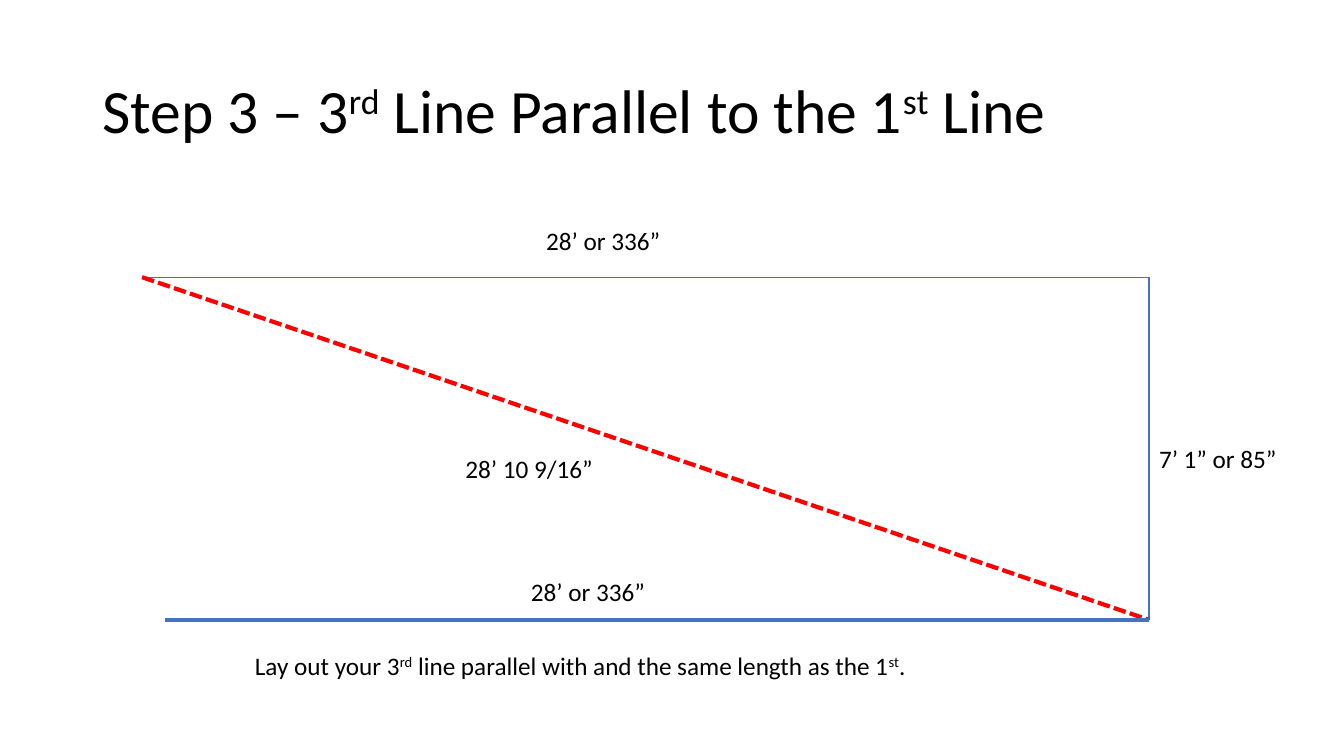
from dataclasses import dataclass

from lxml.etree import SubElement
from pptx import Presentation
from pptx.dml.color import RGBColor
from pptx.enum.dml import MSO_LINE
from pptx.enum.shapes import MSO_CONNECTOR
from pptx.enum.text import MSO_ANCHOR, MSO_AUTO_SIZE, PP_ALIGN
from pptx.oxml.ns import qn
from pptx.slide import Slide
from pptx.text.text import TextFrame
from pptx.util import Pt

FONT = "Calibri"
BLACK = "000000"
BLUE = "4472C4"
RED = "FF0000"
LEFT, TOP, RIGHT, BOTTOM = 101.5, 198, 820.8, 442.8
THIRD_LINE_END = 118.1
LABEL_HEIGHT = 29


@dataclass
class Label:
    left: float
    top: float
    width: float
    wording: tuple[str, ...]


@dataclass
class Line:
    start: tuple[float, float]
    end: tuple[float, float]
    color: str = BLUE
    width: float = 1
    dash: MSO_LINE | None = None


TITLE_WORDING = ("Step 3 – 3", "rd", " Line Parallel to the 1", "st", " Line")

LINES = [
    Line((LEFT, TOP), (RIGHT, TOP)),
    Line((RIGHT, TOP), (RIGHT, BOTTOM)),
    Line((LEFT, TOP), (RIGHT, BOTTOM), RED, 3, MSO_LINE.SQUARE_DOT),
    Line((RIGHT, BOTTOM), (THIRD_LINE_END, BOTTOM), width=3),
]

LABELS = [
    Label(383, 157.7, 97.2, ("28’ or 336”",)),
    Label(325.4, 320.4, 106.6, ("28’ 10 9/16”",)),
    Label(RIGHT, 313.2, 99.4, ("7’ 1” or 85”",)),
    Label(175, 460.8, 491, ("Lay out your 3", "rd", " line parallel with and the same length as the 1", "st", ".")),
    Label(372.2, 408.2, 97.2, ("28’ or 336”",)),
]


def rgb(value: str) -> RGBColor:
    return RGBColor.from_string(value)


def write_text(frame: TextFrame, wording: tuple[str, ...], size: float) -> None:
    paragraph = frame.paragraphs[0]
    paragraph.alignment = PP_ALIGN.LEFT
    paragraph.font.name = FONT
    paragraph.font.size = Pt(size)
    paragraph.font.color.rgb = rgb(BLACK)
    for index, text in enumerate(wording):
        run = paragraph.add_run()
        run.text = text
        is_superscript = index % 2 == 1
        if is_superscript:
            run._r.get_or_add_rPr().set("baseline", "30000")


def add_title(slide: Slide) -> None:
    title = slide.shapes.title
    title.left, title.top, title.width, title.height = Pt(66), Pt(28.8), Pt(828), Pt(104.4)
    frame = title.text_frame
    frame.vertical_anchor = MSO_ANCHOR.MIDDLE
    write_text(frame, TITLE_WORDING, 44)
    frame.paragraphs[0].line_spacing = 0.9


def add_line(slide: Slide, line: Line) -> None:
    points = [Pt(value) for value in (*line.start, *line.end)]
    connector = slide.shapes.add_connector(MSO_CONNECTOR.STRAIGHT, *points)
    connector.line.color.rgb = rgb(line.color)
    connector.line.width = Pt(line.width)
    if line.dash is not None:
        connector.line.dash_style = line.dash
    SubElement(connector._element.spPr, qn("a:effectLst"))


def add_label(slide: Slide, label: Label) -> None:
    box = slide.shapes.add_textbox(Pt(label.left), Pt(label.top), Pt(label.width), Pt(LABEL_HEIGHT))
    box.text_frame.word_wrap = False
    box.text_frame.auto_size = MSO_AUTO_SIZE.SHAPE_TO_FIT_TEXT
    write_text(box.text_frame, label.wording, 18)


def main() -> None:
    presentation = Presentation()
    presentation.slide_width = Pt(960)
    presentation.slide_height = Pt(540)
    slide = presentation.slides.add_slide(presentation.slide_layouts[5])
    add_title(slide)
    for line in LINES:
        add_line(slide, line)
    for label in LABELS:
        add_label(slide, label)
    presentation.save("out.pptx")


if __name__ == "__main__":
    main()
